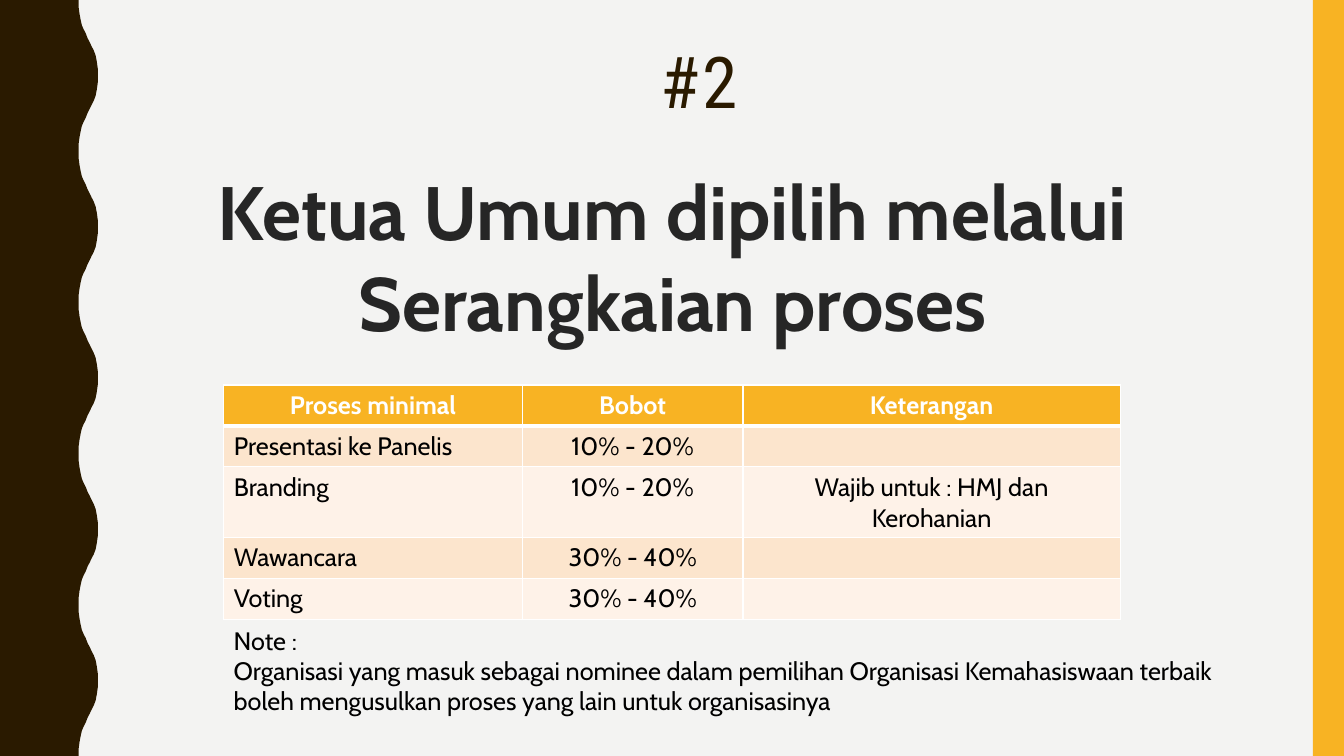
from lxml.etree import SubElement
from pptx import Presentation
from pptx.dml.color import RGBColor
from pptx.enum.shapes import MSO_SHAPE
from pptx.enum.text import MSO_ANCHOR, PP_ALIGN
from pptx.oxml import parse_xml
from pptx.oxml.ns import nsdecls, qn
from pptx.util import Inches, Pt

BROWN, YELLOW, WHITE, BLACK = "2A1A00", "F8B323", "FFFFFF", "000000"
BANDS = ("FCE5CD", "FEF2E8")
HEADER = ("Proses minimal", "Bobot", "Keterangan")
PROCESSES = (
    ("Presentasi ke Panelis", "10% - 20%", ""),
    ("Branding", "10% - 20%", "Wajib untuk : HMJ dan Kerohanian"),
    ("Wawancara", "30% - 40%", ""),
    ("Voting", "30% - 40%", ""),
)
COLUMN_WIDTHS = (2.96, 2.19, 3.74)

# One half wave, trough to crest: (share of the depth, distance down)
HALF_WAVE = ((0, 0), (0, 0.07), (0.05, 0.14), (0.11, 0.2), (0.17, 0.25),
             (0.26, 0.29), (0.37, 0.33), (0.47, 0.38), (0.58, 0.42),
             (0.68, 0.46), (0.79, 0.5), (0.89, 0.55), (0.95, 0.61),
             (1, 0.68), (1, 0.75))
WAVE_PERIOD, WAVE_DEPTH = 1.5, 0.19


def color(value):
    return RGBColor.from_string(value)


def paint(shape, value):
    shape.fill.solid()
    shape.fill.fore_color.rgb = color(value)
    shape.line.fill.background()
    shape.shadow.inherit = False


def format_text(frame, size, font, value, bold=False, align=PP_ALIGN.LEFT):
    for paragraph in frame.paragraphs:
        paragraph.alignment = align
        for run in paragraph.runs:
            run.font.size = Pt(size)
            run.font.name = font
            run.font.bold = bold
            run.font.color.rgb = color(value)


def add_text(slide, box, text, wrap=True):
    frame = slide.shapes.add_textbox(*map(Inches, box)).text_frame
    frame.word_wrap = wrap
    frame.vertical_anchor = MSO_ANCHOR.TOP
    frame.text = text
    return frame


def add_wavy_edge(slide, left, top, width, height):
    trough = left + width - WAVE_DEPTH
    wave = list(HALF_WAVE)
    wave += [(share, WAVE_PERIOD - down) for share, down in HALF_WAVE[-2::-1]]
    points = [
        (trough + share * WAVE_DEPTH, top + period * WAVE_PERIOD + down)
        for period in range(round(height / WAVE_PERIOD))
        for share, down in wave
    ]
    points.append((left, top + height))
    builder = slide.shapes.build_freeform(Inches(left), Inches(top))
    builder.add_line_segments([(Inches(x), Inches(y)) for x, y in points], close=True)
    paint(builder.convert_to_shape(), BROWN)


def add_side_bar(slide, *box):
    paint(slide.shapes.add_shape(MSO_SHAPE.RECTANGLE, *map(Inches, box)), YELLOW)


def add_number(slide, *box):
    frame = add_text(slide, box, "#2")
    format_text(frame, 51, "Roboto Condensed", BROWN, align=PP_ALIGN.CENTER)
    paragraph = frame.paragraphs[0]
    paragraph.line_spacing = 0.9
    paragraph.runs[0].font._element.set("spc", "200")


def add_headline(slide, *box):
    frame = add_text(slide, box, "Ketua Umum dipilih melalui\nSerangkaian proses", wrap=False)
    format_text(frame, 54, "Cabin", "262626", bold=True, align=PP_ALIGN.CENTER)
    # Thin white outline around the letters
    for paragraph in frame.paragraphs:
        for run in paragraph.runs:
            run.font._element.insert(0, parse_xml(
                f'<a:ln {nsdecls("a")} w="{Pt(1.06)}"><a:solidFill>'
                f'<a:srgbClr val="{WHITE}"/></a:solidFill></a:ln>'))


def add_borders(cell, row):
    properties = cell._tc.get_or_add_tcPr()
    widths = {"L": 1, "R": 1, "T": 3 if row == 1 else 1, "B": 3 if row == 0 else 1}
    for side, width in widths.items():
        line = SubElement(properties, qn(f"a:ln{side}"), w=str(Pt(width)))
        SubElement(SubElement(line, qn("a:solidFill")), qn("a:srgbClr"), val=WHITE)


def add_process_table(slide, left, top, width, height):
    rows = (HEADER, *PROCESSES)
    table = slide.shapes.add_table(
        len(rows), len(HEADER), *map(Inches, (left, top, width, height))).table
    table.horz_banding = False
    for column, column_width in zip(table.columns, COLUMN_WIDTHS):
        column.width = Inches(column_width)
    for r, values in enumerate(rows):
        is_header = r == 0
        for c, value in enumerate(values):
            cell = table.cell(r, c)
            cell.text = value
            add_borders(cell, r)
            cell.fill.solid()
            cell.fill.fore_color.rgb = color(YELLOW if is_header else BANDS[(r - 1) % 2])
            format_text(cell.text_frame, 18, "Cabin", WHITE if is_header else BLACK, is_header,
                        PP_ALIGN.CENTER if is_header or c else PP_ALIGN.LEFT)


def add_note(slide, *box):
    frame = add_text(slide, box, (
        "Note :\nOrganisasi yang masuk sebagai nominee dalam pemilihan Organisasi "
        "Kemahasiswaan terbaik boleh mengusulkan proses yang lain untuk organisasinya"))
    format_text(frame, 18, "Cabin", BLACK)


def main():
    deck = Presentation()
    deck.slide_width, deck.slide_height = Inches(13.33), Inches(7.5)
    slide = deck.slides.add_slide(deck.slide_layouts[6])
    slide.background.fill.solid()
    slide.background.fill.fore_color.rgb = color("F3F3F2")

    add_wavy_edge(slide, 0, 0, 0.97, 7.5)
    add_side_bar(slide, 13.02, 0, 0.31, 7.5)
    add_number(slide, 1.37, 0.42, 11.13, 1.63)
    add_headline(slide, 1.59, 1.59, 10.16, 1.92)
    add_process_table(slide, 2.22, 3.82, 8.89, 2.03)
    add_note(slide, 2.22, 6.15, 10.06, 1.01)
    deck.save("out.pptx")


if __name__ == "__main__":
    main()
